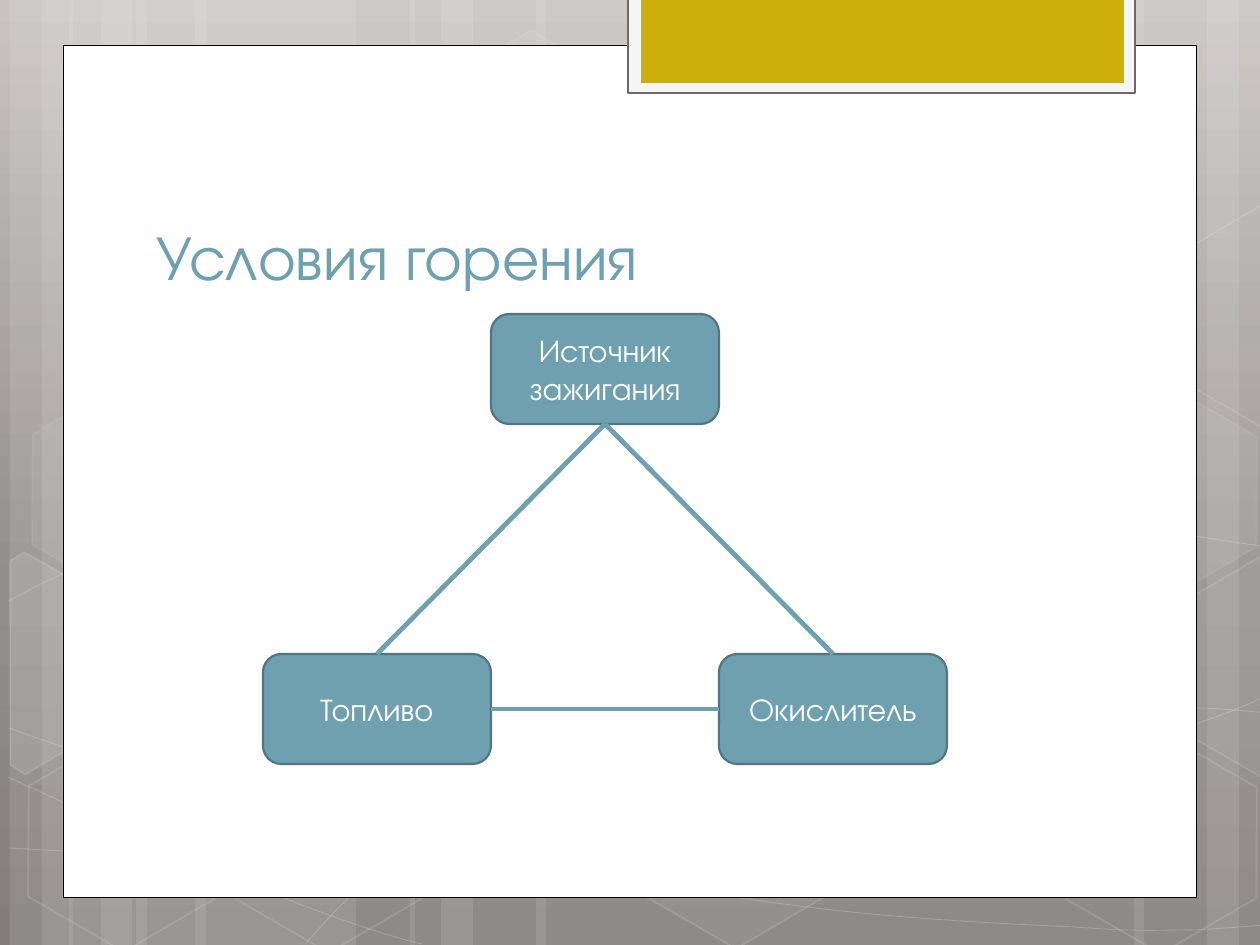
import math
from copy import deepcopy
from dataclasses import dataclass
from typing import Optional

from lxml import etree
from pptx import Presentation
from pptx.dml import color
from pptx.enum import shapes, text
from pptx.oxml import ns
from pptx.util import Emu, Pt

SCALE = 914400 / 126
FONT = "TeX Gyre Adventor"
WHITE, TEAL, TEAL_DARK = "FFFFFF", "6EA0B0", "517682"
TILT = 30
KIND = shapes.MSO_SHAPE


@dataclass
class Style:
    """Fill and line, with opacity in percent."""
    fill: Optional[str] = None
    line: Optional[str] = None
    width: float = 1
    fill_alpha: int = 100
    line_alpha: int = 100


@dataclass
class Hexagon:
    """Faint background hexagon."""
    left: int
    top: int
    fill_alpha: int
    line_alpha: int


@dataclass
class CutHexagon:
    """Hexagon cut by the slide edge, with its turning centre."""
    center: tuple
    points: list
    fill_alpha: int


@dataclass
class Node:
    """Labelled corner of the fire triangle."""
    label: str
    left: int
    top: int


@dataclass
class Link:
    """Side of the triangle between two connection sites."""
    start: str
    start_site: int
    end: str
    end_site: int


STRIPES = [(136, 220), (10, 63), (42, 105), (195, 220), (69, 63), (101, 105),
           (924, 220), (1207, 63), (1134, 105), (536, 388), (410, 63), (441, 105)]
CURVES = [
    [(9, 848), (77, 852), (145, 856), (239, 854), (334, 853), (451, 851), (577, 838),
     (703, 825), (882, 801), (998, 777), (1113, 753), (1231, 716), (1269, 694)],
    [(9, 601), (45, 581), (82, 562), (152, 543), (224, 524), (326, 499), (437, 488),
     (549, 479), (685, 478), (824, 488), (963, 498), (1193, 537), (1269, 547)],
    [(8, 777), (160, 847), (311, 916), (421, 944)],
    [(9, 728), (48, 742), (88, 756), (161, 776), (234, 795), (344, 827), (450, 848),
     (554, 869), (687, 892), (791, 905), (896, 919), (1008, 924), (1075, 927),
     (1140, 932), (1158, 930), (1191, 930), (1223, 929), (1246, 926), (1269, 925)],
    [(305, 944), (328, 919), (350, 893), (381, 871), (411, 848), (454, 823), (489, 805),
     (524, 788), (546, 780), (592, 767), (638, 754), (722, 737), (766, 728),
     (811, 719), (818, 719), (857, 717), (896, 713), (958, 709), (1000, 708),
     (1045, 707), (1116, 708), (1116, 708), (1144, 708), (1173, 708), (1201, 708),
     (1223, 709), (1244, 711), (1256, 712), (1268, 713), (1264, 712), (1268, 713)],
]
HEXAGONS = [Hexagon(421, 45, 4, 8), Hexagon(626, 742, 6, 12), Hexagon(14, 745, 0, 12),
            Hexagon(18, 393, 7, 8), Hexagon(219, 746, 0, 12), Hexagon(949, 571, 10, 12),
            Hexagon(1051, 747, 0, 12), Hexagon(1051, 396, 7, 8)]
CUT_HEXAGONS = [
    CutHexagon((45, 674), [(10, 561), (24, 552), (121, 607), (120, 718), (25, 774), (10, 765)], 10),
    CutHexagon((1241, 655), [(1167, 611), (1261, 556), (1271, 562), (1271, 772), (1263, 777),
                             (1167, 722)], 4),
    CutHexagon((1241, 304), [(1167, 261), (1261, 205), (1273, 212), (1271, 422), (1263, 427),
                             (1167, 372)], 0),
]
NODES = [Node("Источник зажигания", 491, 314), Node("Окислитель", 719, 654),
         Node("Топливо", 263, 654)]
LINKS = [Link("Источник зажигания", 2, "Топливо", 0), Link("Окислитель", 1, "Топливо", 3),
         Link("Источник зажигания", 2, "Окислитель", 0)]


def px(n: int) -> Emu:
    """Turn pixels into EMU."""
    return Emu(round(n * SCALE))


def rgb(value: str) -> color.RGBColor:
    """Turn a hex string into a colour."""
    return color.RGBColor.from_string(value)


def assign(obj, values: dict) -> None:
    """Set attributes from a dict."""
    for name, value in values.items():
        setattr(obj, name, value)


def paint(sp, style: Style) -> None:
    """Apply fill, line and opacity to a shape."""
    sp.shadow.inherit = False
    for fill, value in ((sp.fill, style.fill), (sp.line.fill, style.line)):
        if value:
            fill.solid()
            fill.fore_color.rgb = rgb(value)
        else:
            fill.background()
    if style.line:
        sp.line.width = Pt(style.width)
    props = sp.element.spPr
    for parent, alpha in ((props, style.fill_alpha), (props.find(ns.qn("a:ln")), style.line_alpha)):
        clr = parent.find(f"{ns.qn('a:solidFill')}/{ns.qn('a:srgbClr')}")
        if clr is not None and alpha < 100:
            etree.SubElement(clr, ns.qn("a:alpha"), val=str(alpha * 1000))


def add_box(slide, kind, box: tuple, style: Style):
    """Add a preset shape at a pixel box."""
    sp = slide.shapes.add_shape(kind, *map(px, box))
    paint(sp, style)
    return sp


def add_path(slide, points: list, style: Style, close: bool):
    """Add a freeform through pixel points."""
    builder = slide.shapes.build_freeform(*points[0], scale=SCALE)
    builder.add_line_segments(points[1:], close=close)
    sp = builder.convert_to_shape()
    paint(sp, style)
    return sp


def add_curve(slide, points: list) -> None:
    """Add a chain of cubic curves, three points to a segment."""
    sp = add_path(slide, points, Style(None, WHITE, 0.5, line_alpha=20), False)
    lines = list(sp.element.iter(ns.qn("a:lnTo")))
    for i in range(0, len(lines), 3):
        curve = etree.SubElement(lines[i].getparent(), ns.qn("a:cubicBezTo"))
        for line in lines[i:i + 3]:
            curve.append(line[0])
            line.getparent().remove(line)


def turn_back(point: tuple, center: tuple) -> tuple:
    """Undo the hexagon tilt about a centre."""
    a = math.radians(-TILT)
    x, y = point[0] - center[0], point[1] - center[1]
    return (center[0] + x * math.cos(a) - y * math.sin(a),
            center[1] + x * math.sin(a) + y * math.cos(a))


def write(sp, label: str, anchor, align, size: int, hue: str) -> None:
    """Put one formatted paragraph in a shape."""
    tf = sp.text_frame
    assign(tf, {"word_wrap": True, "auto_size": text.MSO_AUTO_SIZE.NONE, "vertical_anchor": anchor})
    p = tf.paragraphs[0]
    p.alignment = align
    r = p.add_run()
    r.text = label
    assign(r.font, {"name": FONT, "size": Pt(size)})
    r.font.color.rgb = rgb(hue)


def add_background(slide) -> None:
    """Draw the gradient, stripes, curves and hexagons."""
    fill = slide.background.fill
    fill.gradient()
    fill.gradient_angle = 270
    first = next(slide.element.iter(ns.qn("a:gs")))
    first.addnext(deepcopy(first))
    for stop, (position, value) in zip(fill.gradient_stops,
                                       ((0, "C7C4C2"), (0.62, "918F8D"), (1, "817E7C"))):
        stop.position = position
        stop.color.rgb = rgb(value)
    for left, width in STRIPES:
        add_box(slide, KIND.RECTANGLE, (left, 0, width, 945), Style(WHITE, fill_alpha=10))
    for points in CURVES:
        add_curve(slide, points)
    for h in HEXAGONS:
        sp = add_box(slide, KIND.HEXAGON, (h.left, h.top, 220, 192),
                     Style(WHITE if h.fill_alpha else None, WHITE, 1, h.fill_alpha, h.line_alpha))
        sp.rotation = TILT
        sp.adjustments[0], sp.adjustments[1] = 0.285, 1.155
    for c in CUT_HEXAGONS:
        sp = add_path(slide, [turn_back(point, c.center) for point in c.points],
                      Style(WHITE if c.fill_alpha else None, WHITE, 1, c.fill_alpha, 12), True)
        sp.rotation = TILT


def add_triangle(slide) -> None:
    """Draw the nodes and the links that join them."""
    nodes = {}
    for n in NODES:
        sp = add_box(slide, KIND.ROUNDED_RECTANGLE, (n.left, n.top, 228, 110),
                     Style(TEAL, TEAL_DARK, 1.25))
        write(sp, n.label, text.MSO_ANCHOR.MIDDLE, text.PP_ALIGN.CENTER, 18, WHITE)
        nodes[n.label] = sp
    for link in LINKS:
        cxn = slide.shapes.add_connector(shapes.MSO_CONNECTOR.STRAIGHT, 0, 0, 0, 0)
        cxn.begin_connect(nodes[link.start], link.start_site)
        cxn.end_connect(nodes[link.end], link.end_site)
        cxn.line.color.rgb = rgb(TEAL)
        cxn.line.width = Pt(2.75)
        etree.SubElement(cxn.element.spPr, ns.qn("a:effectLst"))


def main() -> None:
    """Build and save the slide."""
    prs = Presentation()
    assign(prs, {"slide_width": px(1260), "slide_height": px(945)})
    slide = prs.slides.add_slide(prs.slide_layouts[5])
    add_background(slide)
    add_box(slide, KIND.RECTANGLE, (63, 45, 1134, 853), Style(WHITE, "000000", 0.5))
    add_box(slide, KIND.RECTANGLE, (628, -3, 507, 96), Style("F5F5F5", "6E6964", 1.25))
    tab = add_box(slide, KIND.RECTANGLE, (641, -3, 483, 86), Style("CCAF0A"))
    title = slide.shapes.title
    assign(title, {"left": px(144), "top": px(141), "width": px(968), "height": px(158)})
    write(title, "Условия горения", text.MSO_ANCHOR.BOTTOM, text.PP_ALIGN.LEFT, 36, TEAL)
    tab.element.addnext(title.element)
    add_triangle(slide)
    prs.save("out.pptx")


if __name__ == "__main__":
    main()
